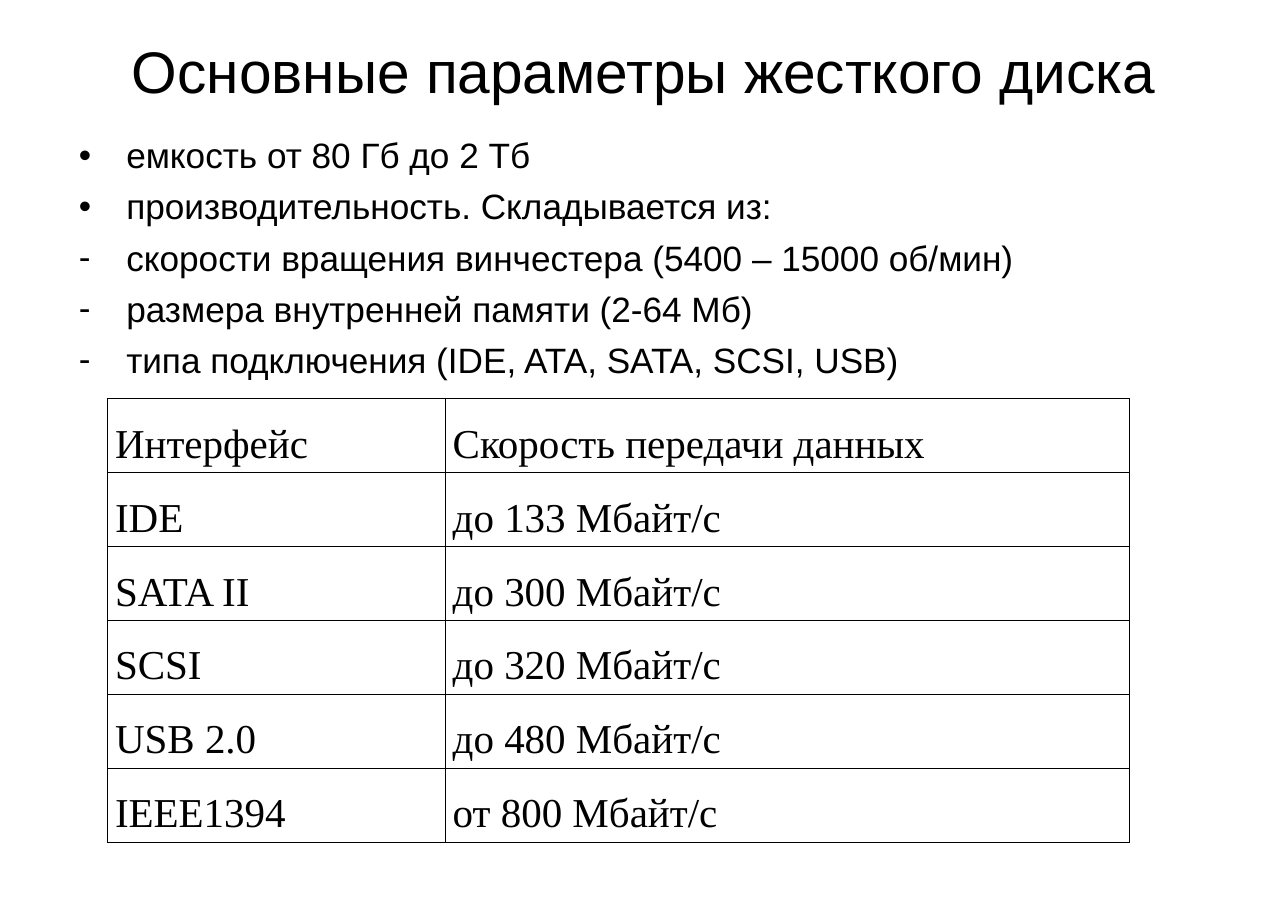
from lxml import etree
from pptx import Presentation
from pptx.dml.color import RGBColor
from pptx.enum.text import MSO_ANCHOR, MSO_AUTO_SIZE, PP_ALIGN
from pptx.oxml.ns import qn
from pptx.util import Cm, Pt

CENTER, LEFT, JUSTIFY = PP_ALIGN.CENTER, PP_ALIGN.LEFT, PP_ALIGN.JUSTIFY
TOP, MIDDLE = MSO_ANCHOR.TOP, MSO_ANCHOR.MIDDLE
NO_FIT = MSO_AUTO_SIZE.NONE

TITLE = "Основные параметры жесткого диска"
PARAMETERS = [
    ("•", "емкость от 80 Гб до 2 Тб"),
    ("•", "производительность. Складывается из:"),
    ("-", "скорости вращения винчестера (5400 – 15000 об/мин)"),
    ("-", "размера внутренней памяти (2-64 Мб)"),
    ("-", "типа подключения (IDE, ATA, SATA, SCSI, USB)"),
]
SPEEDS = [
    ("Интерфейс", "Скорость передачи данных"),
    ("IDE", "до 133 Мбайт/с"),
    ("SATA II", "до 300 Мбайт/с"),
    ("SCSI", "до 320 Мбайт/с"),
    ("USB 2.0", "до 480 Мбайт/с"),
    ("IEEE1394", "от 800 Мбайт/с"),
]


def color(value):
    return RGBColor.from_string(value)


def apply(target, values):
    for name, value in values.items():
        setattr(target, name, value)


class SlideBuilder:
    """Holds the style and the current slide and adds its elements."""

    ink = "000000"
    heading = {"name": "Arial", "size": Pt(40), "bold": False}
    listing = {"name": "Arial", "size": Pt(24), "bold": False}
    tabular = {"name": "Times New Roman", "size": Pt(28), "bold": False}
    frame = {
        "margin_left": Cm(0.3), "margin_right": Cm(0.3),
        "margin_top": Cm(0.15), "margin_bottom": Cm(0.15),
        "word_wrap": True, "auto_size": NO_FIT,
    }
    cell = {
        "margin_left": Cm(0.18), "margin_right": Cm(0.18),
        "margin_top": 0, "margin_bottom": 0, "vertical_anchor": TOP,
    }

    def __init__(self, prs):
        self.s = prs.slides.add_slide(prs.slide_layouts[1])

    def place(self, sp, left, top, width, height, anchor):
        apply(sp, {"left": Cm(left), "top": Cm(top),
                   "width": Cm(width), "height": Cm(height)})
        apply(sp.text_frame, {**self.frame, "vertical_anchor": anchor})
        return sp.text_frame

    def add_text(self, p, text, font, **layout):
        apply(p, layout)
        r = p.add_run()
        r.text = text
        apply(r.font, font)
        r.font.color.rgb = color(self.ink)

    def title(self, text, *box):
        tf = self.place(self.s.shapes.title, *box, MIDDLE)
        self.add_text(tf.paragraphs[0], text, self.heading, alignment=CENTER)

    def bullets(self, items, *box):
        tf = self.place(self.s.placeholders[1], *box, TOP)
        for i, (mark, text) in enumerate(items):
            p = tf.paragraphs[0] if i == 0 else tf.add_paragraph()
            pPr = p._p.get_or_add_pPr()
            pPr.set("marL", str(Cm(1.14)))
            pPr.set("indent", str(-Cm(1.14)))
            etree.SubElement(pPr, qn("a:buFont"), typeface="Arial")
            etree.SubElement(pPr, qn("a:buChar"), char=mark)
            self.add_text(p, text, self.listing, alignment=LEFT,
                          space_before=Pt(6 if i else 0))

    def borders(self, cell):
        tcPr = cell._tc.get_or_add_tcPr()
        for side in ("lnL", "lnR", "lnT", "lnB"):
            ln = etree.SubElement(tcPr, qn(f"a:{side}"), w=str(Pt(1)))
            fill = etree.SubElement(ln, qn("a:solidFill"))
            etree.SubElement(fill, qn("a:srgbClr"), val=self.ink)

    def table(self, rows, left, top, widths, row_height):
        tbl = self.s.shapes.add_table(
            len(rows), len(widths), Cm(left), Cm(top),
            Cm(sum(widths)), Cm(row_height * len(rows))).table
        apply(tbl, {"first_row": False, "horz_banding": False})
        for column, width in zip(tbl.columns, widths):
            column.width = Cm(width)
        for row, texts in zip(tbl.rows, rows):
            row.height = Cm(row_height)
            for cell, text in zip(row.cells, texts):
                apply(cell, self.cell)
                self.borders(cell)
                cell.fill.background()
                self.add_text(cell.text_frame.paragraphs[0], text, self.tabular,
                              alignment=JUSTIFY, line_spacing=1.5)


def main():
    prs = Presentation()
    apply(prs, {"slide_width": Cm(31.01), "slide_height": Cm(22)})
    slide = SlideBuilder(prs)
    slide.title(TITLE, 1.55, 0.89, 27.89, 1.57)
    slide.bullets(PARAMETERS, 1.6, 3.07, 27.89, 6.15)
    slide.table(SPEEDS, 2.59, 9.6, (8.13, 16.48), 1.78)
    prs.save("out.pptx")


if __name__ == "__main__":
    main()
